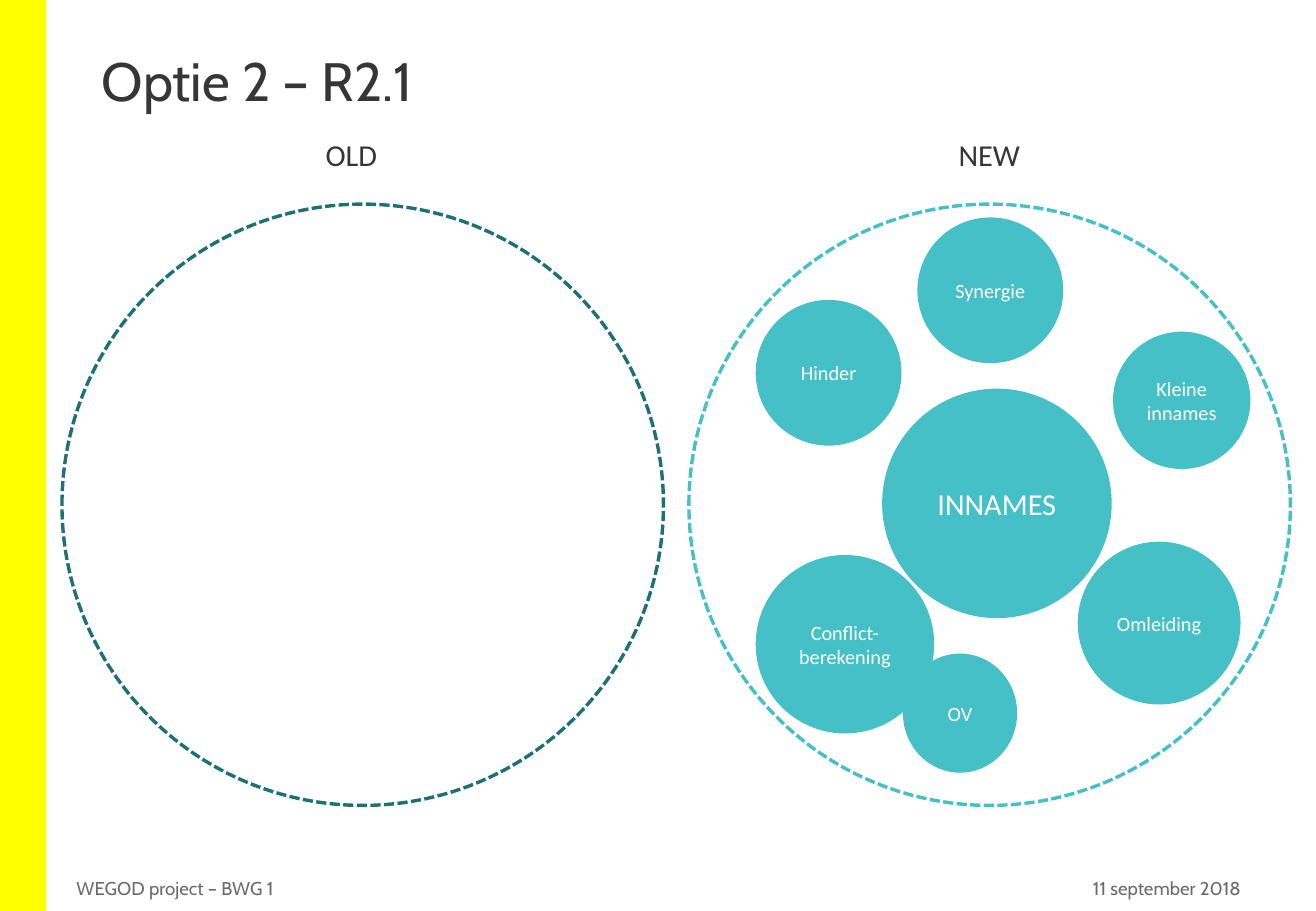
import pptx
import pptx.dml.color
import pptx.enum.dml
import pptx.enum.shapes
import pptx.enum.text
import pptx.util

Pt = pptx.util.Pt
ALIGN = pptx.enum.text.PP_ALIGN
ANCHOR = pptx.enum.text.MSO_ANCHOR
SHAPE = pptx.enum.shapes.MSO_SHAPE

# Content (lengths in points)
WIDTH, HEIGHT = 779.76, 540
YELLOW, TEAL, DARK_TEAL = "FFFF00", "44C0C6", "1D7074"
DARK, GREY, WHITE = "373636", "6B6B6B", "FFFFFF"

TITLE = "Optie 2 – R2.1"
FOOTER = "WEGOD project – BWG 1"
DATE = "11 september 2018"

# label, label left, label width, ring left, ring colour
SYSTEMS = [
    ("OLD", 185.8, 45.4, 36.7, DARK_TEAL),
    ("NEW", 560.9, 51.1, 408.2, TEAL),
]
RING_TOP, RING_SIZE = 121, 356.4

# label, left, top, width, height, font size, side inset
MODULES = [
    ("INNAMES", 522.7, 230.4, 136, 136, 18, 7.2),
    ("Hinder", 447.8, 177.8, 86.4, 86.4, 12, 0),
    ("Omleiding", 638.6, 321.1, 96.5, 96.5, 12, 0),
    ("Conflict-berekening", 447.8, 329, 105.8, 105.8, 12, 0),
    ("Kleine innames", 659.5, 196.6, 81.4, 81.4, 12, 0),
    ("OV", 535, 387.4, 67.7, 70.6, 12, 0),
    ("Synergie", 543.6, 128.9, 86.4, 86.4, 12, 0),
]


def paint(color_format, color):
    color_format.rgb = pptx.dml.color.RGBColor.from_string(color)


def write(frame, text, size, color, font="Calibri", align=ALIGN.LEFT,
          anchor=ANCHOR.TOP, wrap=True):
    frame.word_wrap = wrap
    frame.vertical_anchor = anchor
    paragraph = frame.paragraphs[0]
    paragraph.text = text
    paragraph.alignment = align
    paragraph.font.name = font
    paragraph.font.size = Pt(size)
    paint(paragraph.font.color, color)
    return paragraph


def add_text(box, *args, **options):
    frame = slide.shapes.add_textbox(*map(Pt, box)).text_frame
    return write(frame, *args, **options)


def add_figure(kind, box, fill=None, line=None):
    figure = slide.shapes.add_shape(kind, *map(Pt, box))
    figure.shadow.inherit = False
    if fill:
        figure.fill.solid()
        paint(figure.fill.fore_color, fill)
    else:
        figure.fill.background()
    if line:
        paint(figure.line.color, line)
        figure.line.width = Pt(2)
        figure.line.dash_style = pptx.enum.dml.MSO_LINE.SQUARE_DOT
    else:
        figure.line.fill.background()
    return figure


presentation = pptx.Presentation()
presentation.slide_width, presentation.slide_height = Pt(WIDTH), Pt(HEIGHT)
slide = presentation.slides.add_slide(presentation.slide_layouts[6])

# Side band, title and footer
add_figure(SHAPE.RECTANGLE, (0, 0, 27.4, HEIGHT), fill=YELLOW)
title = add_text((53.3, 28.8, 672.5, 77.8), TITLE, 32, DARK, font="Cabin")
title.line_spacing = 0.9
add_text((38.2, 519.8, 478.8, 13.7), FOOTER, 11, GREY, font="Cabin",
         anchor=ANCHOR.MIDDLE)
add_text((517, 519.8, 225.4, 13.7), DATE, 11, GREY, font="Cabin",
         align=ALIGN.RIGHT, anchor=ANCHOR.MIDDLE)

# Old and new system rings
for label, label_left, label_width, ring_left, color in SYSTEMS:
    add_figure(SHAPE.OVAL, (ring_left, RING_TOP, RING_SIZE, RING_SIZE), line=color)
    add_text((label_left, 77, label_width, 28.8), label, 18, DARK, wrap=False)

# Modules of the new system
for label, left, top, width, height, size, inset in MODULES:
    module = add_figure(SHAPE.OVAL, (left, top, width, height), fill=TEAL)
    frame = module.text_frame
    frame.margin_left = frame.margin_right = Pt(inset)
    frame.margin_top = frame.margin_bottom = Pt(inset / 2)
    write(frame, label, size, WHITE, align=ALIGN.CENTER, anchor=ANCHOR.MIDDLE)

presentation.save("out.pptx")
